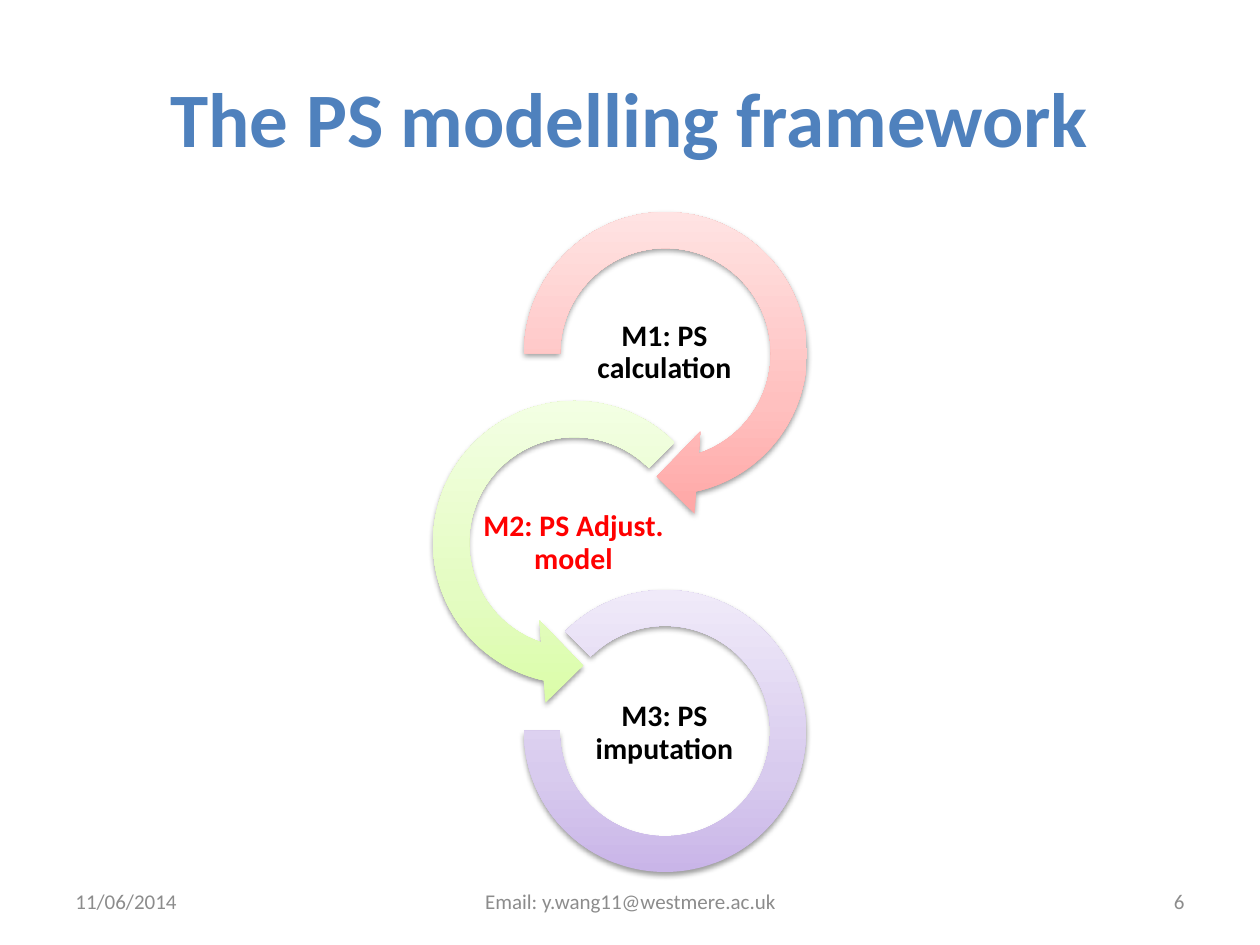
from copy import deepcopy

from lxml import etree
from pptx import Presentation
from pptx.dml.color import RGBColor
from pptx.enum.shapes import MSO_SHAPE
from pptx.enum.text import MSO_ANCHOR, PP_ALIGN
from pptx.oxml.ns import qn
from pptx.util import Pt

PX = 914400 / 126
LEFT, CENTER, RIGHT = PP_ALIGN.LEFT, PP_ALIGN.CENTER, PP_ALIGN.RIGHT
MIDDLE = MSO_ANCHOR.MIDDLE
ARROW, LEFT_ARROW = MSO_SHAPE.CIRCULAR_ARROW, MSO_SHAPE.LEFT_CIRCULAR_ARROW
ARC = MSO_SHAPE.BLOCK_ARC
STOPS = (0, 0.35, 1)


def px(*values):
    return [round(v * PX) for v in values]


def write(sp, text, size, color, align, bold=False):
    tf = sp.text_frame
    tf.word_wrap = True
    tf.vertical_anchor = MIDDLE
    p = tf.paragraphs[0]
    p.alignment = align
    r = p.add_run()
    r.text = text
    for name, value in {"name": "Calibri", "size": Pt(size), "bold": bold}.items():
        setattr(r.font, name, value)
    r.font.color.rgb = RGBColor.from_string(color)
    return tf


prs = Presentation()
prs.slide_width, prs.slide_height = px(1260, 945)
s = prs.slides.add_slide(prs.slide_layouts[5])

# Title
title = s.shapes.title
title.left, title.top, title.width, title.height = px(63, 38, 1134, 157)
write(title, "The PS modelling framework", 44, "4F81BD", CENTER, True)

# Chain of ring arrows: shape, box, adjustments, gradient; label, its place, colour
steps = [
    (ARROW, (501, 189, 329, 329), (0.1098, 11.42, 45, 108, 0.125),
     ("FFA6A5", "FFC0BF", "FFE7E7"), "M1: PS calculation", (573, 307), "000000"),
    (LEFT_ARROW, (410, 378, 329, 329), (0.1098, 11.42, 63, 189, 0.125),
     ("DAFDA7", "E4FCC2", "F5FFE7"), "M2: PS Adjust. model", (482, 498), "FF0000"),
    (ARC, (524, 590, 282, 282), (135, 108, 0.127),
     ("C9B5E8", "D8CBEE", "F0EAF9"), "M3: PS imputation", (573, 688), "000000"),
]
for kind, box, adjustments, colors, label, place, text_color in steps:
    sp = s.shapes.add_shape(kind, *px(*box))
    for i, value in enumerate(adjustments):
        sp.adjustments[i] = value
    sp.line.fill.background()

    # Upward gradient with a third stop
    sp.fill.gradient()
    sp.fill.gradient_angle = 90
    stop_list = sp._element.spPr.find(qn("a:gradFill")).find(qn("a:gsLst"))
    stop_list.append(deepcopy(stop_list[0]))
    for stop, position, color in zip(sp.fill.gradient_stops, STOPS, colors):
        stop.position = position
        stop.color.rgb = RGBColor.from_string(color)

    # Soft shadow below
    sp.shadow.inherit = False
    effects = sp._element.spPr.find(qn("a:effectLst"))
    shadow = etree.SubElement(effects, qn("a:outerShdw"), blurRad="40000",
                              dist="20000", dir="5400000", rotWithShape="0")
    black = etree.SubElement(shadow, qn("a:srgbClr"), val="000000")
    etree.SubElement(black, qn("a:alpha"), val="38000")

    tb = s.shapes.add_textbox(*px(*place, 183, 91))
    tf = write(tb, label, 17, text_color, CENTER, True)
    tf.paragraphs[0].line_spacing = 0.9
    for side in ("left", "top", "right", "bottom"):
        setattr(tf, f"margin_{side}", px(1)[0])

# Footer
for text, left, width, align in [
    ("11/06/2014", 63, 294, LEFT),
    ("Email: y.wang11@westmere.ac.uk", 431, 399, CENTER),
    ("6", 903, 294, RIGHT),
]:
    tb = s.shapes.add_textbox(*px(left, 876, width, 50))
    write(tb, text, 12, "8C8C8C", align)

prs.save("out.pptx")
